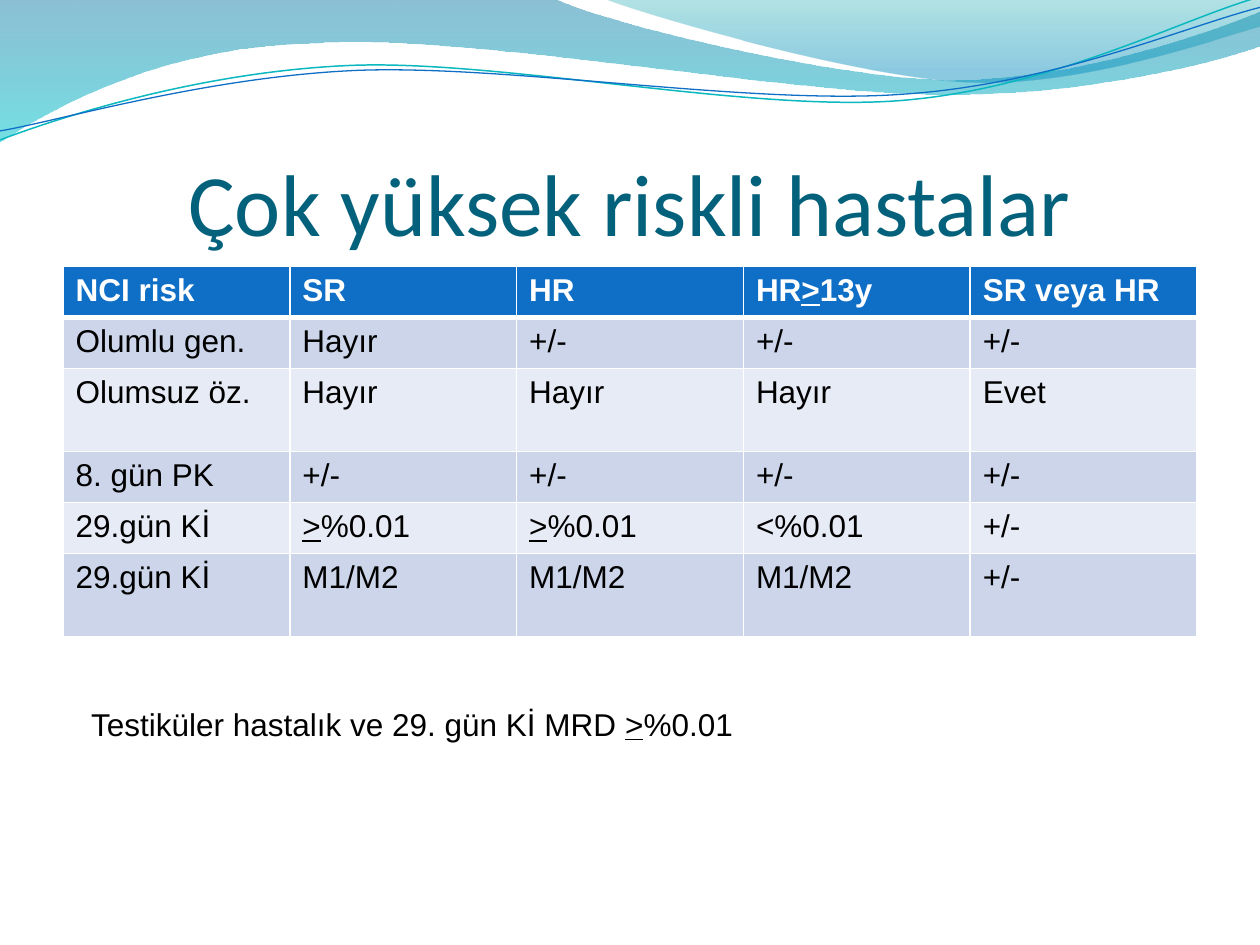
from math import cos, radians, sin

from lxml.etree import SubElement
from pptx import Presentation
from pptx.dml.color import RGBColor
from pptx.enum.text import MSO_ANCHOR as Anchor, PP_ALIGN as Align
from pptx.oxml.ns import qn
from pptx.util import Cm, Pt

WHITE, BLACK, BLUE, TEAL = "FFFFFF", "000000", "0F6FC6", "04617B"
BANDS = ("CCD5EA", "E7EBF5")
TILT = 357.3

# Outlines in cm: a start, then steps of one point (line) or three (curve).
WAVE = [[(0, 0)], [(11.18, -0.03)],
        [(12.09, 0.43), (16.87, 1.6), (19.25, 1.6)],
        [(21.67, 1.6), (24.33, 0.66), (25.4, 0.23)],
        [(25.43, 0.91)],
        [(24.97, 1.12), (22.1, 1.93), (18.95, 1.9)],
        [(15.8, 1.9), (9.7, 0.71), (6.53, 0.86)],
        [(3.28, 0.91), (1.17, 2.11), (-0.03, 2.87)],
        [(0, 0)]]
CREST = [[(12.17, -0.03)],
         [(12.93, 0.28), (17.32, 1.57), (19.53, 1.65)],
         [(21.74, 1.75), (24.41, 0.81), (25.4, 0.53)],
         [(25.4, 0)], [(12.17, -0.03)]]
GREEN_LINE = [[(0, 2.82)],
              [(1.22, 2.36), (4.01, 1.45), (7.04, 1.32)],
              [(10.03, 1.19), (15.06, 2.26), (18.11, 2.03)],
              [(21.16, 1.8), (23.83, 0.38), (25.35, -0.05)]]
BLUE_LINE = [[(0, 2.64)],
             [(1.19, 2.44), (4.17, 1.55), (7.19, 1.42)],
             [(10.24, 1.3), (15.16, 2.13), (18.21, 1.9)],
             [(21.23, 1.7), (23.9, 0.53), (25.4, 0.15)]]

# Text between underscores is underlined.
ROWS = [
    ["NCI risk", "SR", "HR", "HR_>_13y", "SR veya HR"],
    ["Olumlu gen.", "Hayır", "+/-", "+/-", "+/-"],
    ["Olumsuz öz.", "Hayır", "Hayır", "Hayır", "Evet"],
    ["8. gün PK", "+/-", "+/-", "+/-", "+/-"],
    ["29.gün Kİ", "_>_%0.01", "_>_%0.01", "<%0.01", "+/-"],
    ["29.gün Kİ", "M1/M2", "M1/M2", "M1/M2", "+/-"],
]
LOW, TALL = 1.03, 1.67
HEIGHTS = [LOW, LOW, TALL, LOW, LOW, TALL]


def color(code):
    return RGBColor.from_string(code)


def level(path, mid):
    """Turn an outline back by the tilt, about its middle."""
    c, s = cos(radians(TILT)), sin(radians(TILT))
    mx, my = mid
    return [[(mx + (x - mx) * c + (y - my) * s,
              my - (x - mx) * s + (y - my) * c) for x, y in step]
            for step in path]


def add_path(slide, path, close):
    """Build the outline, joining each three points into one Bézier curve."""
    first, *rest = [(Cm(x), Cm(y)) for step in path for x, y in step]
    pen = slide.shapes.build_freeform(*first)
    pen.add_line_segments(rest, close)
    shape = pen.convert_to_shape()
    shape.shadow.inherit = False
    nodes = iter(list(shape.element.iter(qn("a:lnTo"))))
    for step in path[1:]:
        group = [next(nodes) for _ in step]
        if len(group) == 3:
            curve = group[0].makeelement(qn("a:cubicBezTo"))
            group[0].addprevious(curve)
            for node in group:
                curve.append(node[0])
                node.getparent().remove(node)
    return shape


def add_wave(slide, path, stops):
    """Draw a closed area; each stop is place, colour and opacity."""
    shape = add_path(slide, path, True)
    shape.line.fill.background()
    shape.fill.gradient()
    shape.fill.gradient_angle = 270
    for stop, (place, code, _) in zip(shape.fill.gradient_stops, stops):
        stop.position = place
        stop.color.rgb = color(code)
    for node, (_, _, part) in zip(shape.element.iter(qn("a:srgbClr")), stops):
        SubElement(node, qn("a:alpha"), val=str(part * 1000))


def add_curve(slide, path, mid, code, width):
    shape = add_path(slide, level(path, mid), False)
    shape.rotation = TILT
    shape.fill.background()
    shape.line.color.rgb = color(code)
    shape.line.width = Pt(width)


def write(para, text, size=18, font="Arial", code=BLACK, bold=False):
    for i, part in enumerate(text.split("_")):
        if part:
            run = para.add_run()
            run.text = part
            run.font.size = Pt(size)
            run.font.name = font
            run.font.bold = bold
            run.font.color.rgb = color(code)
            if i % 2:
                run.font.underline = True


def add_text(slide, box, text, **style):
    frame = slide.shapes.add_textbox(*map(Cm, box)).text_frame
    frame.word_wrap = True
    write(frame.paragraphs[0], text, **style)
    return frame


def set_edges(cell, top, bottom):
    props = cell._tc.get_or_add_tcPr()
    for side, width in zip("LRTB", (1, 1, top, bottom)):
        line = SubElement(props, qn(f"a:ln{side}"), w=str(Pt(width)))
        fill = SubElement(line, qn("a:solidFill"))
        SubElement(fill, qn("a:srgbClr"), val=WHITE)


def add_grid(slide, left, top, width):
    table = slide.shapes.add_table(len(ROWS), len(ROWS[0]), Cm(left), Cm(top),
                                   Cm(width), Cm(sum(HEIGHTS))).table
    for r, texts in enumerate(ROWS):
        table.rows[r].height = Cm(HEIGHTS[r])
        head = r == 0
        for c, text in enumerate(texts):
            cell = table.cell(r, c)
            set_edges(cell, 3 if r == 1 else 1, 3 if head else 1)
            cell.fill.solid()
            cell.fill.fore_color.rgb = color(BLUE if head else BANDS[(r - 1) % 2])
            write(cell.text_frame.paragraphs[0], text,
                  code=WHITE if head else BLACK, bold=head)


def add_title(slide, text):
    frame = add_text(slide, (1.27, 1.94, 22.86, 3.18), text,
                     size=50, font="Calibri", code=TEAL)
    frame.vertical_anchor = Anchor.BOTTOM
    frame.margin_left = frame.margin_right = frame.margin_bottom = 0
    frame.paragraphs[0].alignment = Align.CENTER


def main():
    deck = Presentation()
    deck.slide_width, deck.slide_height = Cm(25.4), Cm(19.05)
    slide = deck.slides.add_slide(deck.slide_layouts[6])
    add_wave(slide, WAVE, [(0, "0074A1", 45), (1, "00C6CF", 55)])
    add_wave(slide, CREST, [(0, "00A1A9", 30), (0.8, "008BBF", 45)])
    add_curve(slide, GREEN_LINE, (12.67, 1.46), "0AB8BF", 0.85)
    add_curve(slide, BLUE_LINE, (12.69, 1.5), BLUE, 0.75)
    add_title(slide, "Çok yüksek riskli hastalar")
    add_grid(slide, 1.27, 5.37, 22.86)
    add_text(slide, (1.59, 14.08, 22.43, 1.02),
             "Testiküler hastalık ve 29. gün Kİ MRD _>_%0.01")
    deck.save("out.pptx")


if __name__ == "__main__":
    main()
